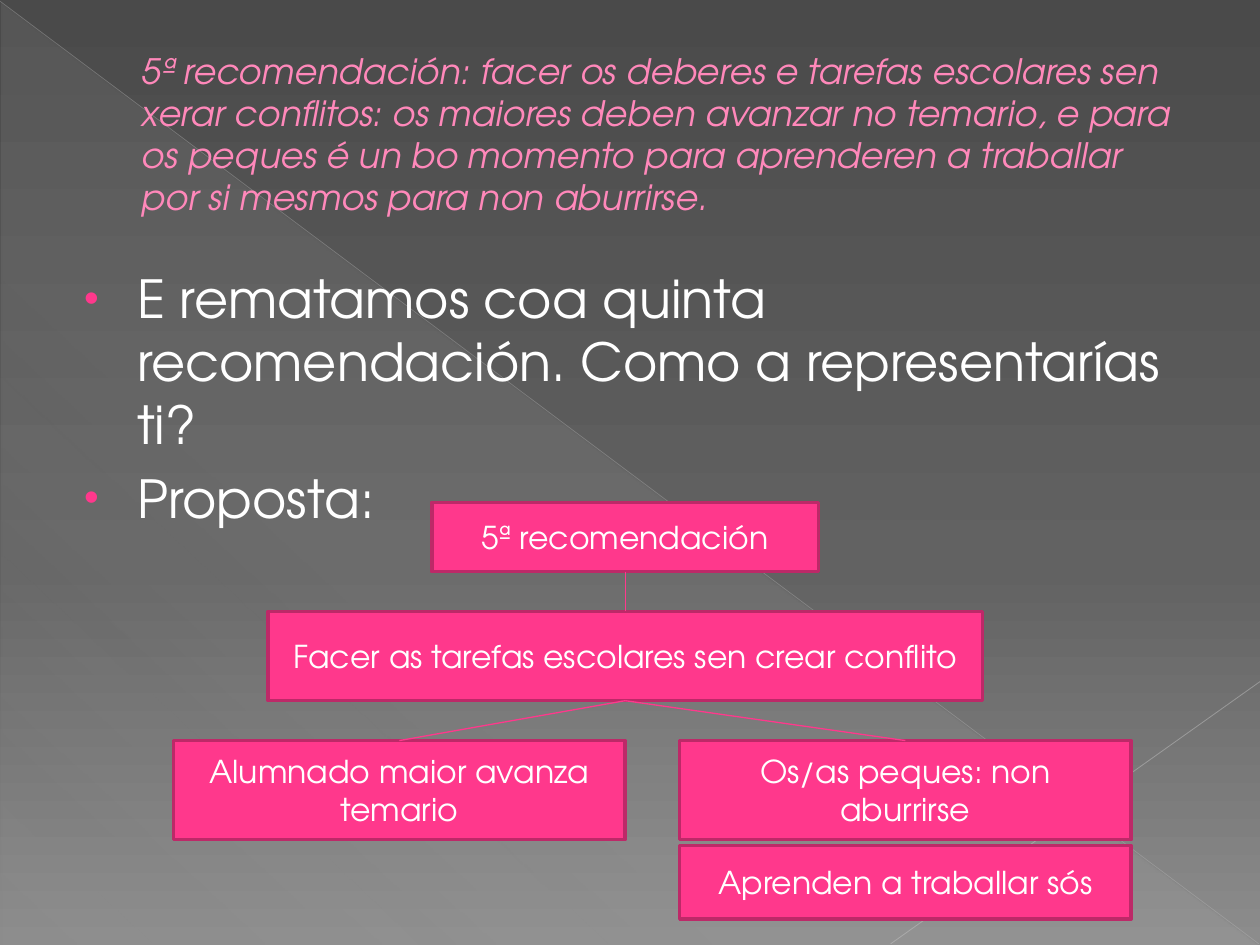
from typing import NamedTuple

from lxml.etree import SubElement
from pptx import Presentation
from pptx.dml.color import RGBColor
from pptx.enum.shapes import MSO_CONNECTOR as Connector, MSO_SHAPE as ShapeKind
from pptx.enum.text import MSO_ANCHOR as Anchor, PP_ALIGN as Align
from pptx.oxml.ns import qn
from pptx.util import Pt

COLORS = {
    "pink": "FF388C",
    "border": "BD2968",
    "title": "FF88BA",
    "outline": "B12761",
    "white": "FFFFFF",
    "dark": "4A4A4A",
    "middle": "626262",
    "light": "8C8C8C",
    "veil": "D2D2D2",
    "diagonal": "BFBFBF",
    "corner": "C6C6C6",
}
FONT = "TeX Gyre Adventor"


class Stop(NamedTuple):
    position: int
    color: str
    opacity: int = 100


class Box(NamedTuple):
    text: str
    left: float
    top: float
    width: float
    height: float

    @property
    def top_center(self) -> tuple[float, float]:
        return self.left + self.width / 2, self.top

    @property
    def bottom_center(self) -> tuple[float, float]:
        return self.left + self.width / 2, self.top + self.height


class Line(NamedTuple):
    start: tuple[float, float]
    end: tuple[float, float]
    color: str = "pink"
    width: float = 0.75
    opacity: int = 100


def rgb(name: str) -> RGBColor:
    return RGBColor.from_string(COLORS[name])


def add_color(parent, name: str, opacity: int = 100) -> None:
    color = SubElement(parent, qn("a:srgbClr"), val=COLORS[name])
    if opacity < 100:
        SubElement(color, qn("a:alpha"), val=str(opacity * 1000))


def set_gradient(fill, owner, stops: list[Stop], angle: int) -> None:
    fill.gradient()
    gradient = next(owner.iter(qn("a:gradFill")))
    stop_list = gradient.find(qn("a:gsLst"))
    for old_stop in list(stop_list):
        stop_list.remove(old_stop)
    for stop in stops:
        element = SubElement(stop_list, qn("a:gs"), pos=str(stop.position * 1000))
        add_color(element, stop.color, stop.opacity)
    gradient.find(qn("a:lin")).set("ang", str(angle * 60000))


def add_line(slide, line: Line) -> None:
    points = [Pt(value) for value in (*line.start, *line.end)]
    connector = slide.shapes.add_connector(Connector.STRAIGHT, *points)
    connector.line.width = Pt(line.width)
    connector.line.color.rgb = rgb(line.color)
    properties = connector._element.spPr
    if line.opacity < 100:
        color = next(properties.iter(qn("a:srgbClr")))
        SubElement(color, qn("a:alpha"), val=str(line.opacity * 1000))
    SubElement(properties, qn("a:effectLst"))


def write_text(paragraph, text: str, size: float, color: str, italic: bool = False):
    run = paragraph.add_run()
    run.text = text
    formats = {"name": FONT, "size": Pt(size), "italic": italic}
    for attribute, value in formats.items():
        setattr(run.font, attribute, value)
    run.font.color.rgb = rgb(color)
    return run


def add_box(slide, box: Box) -> None:
    bounds = [Pt(value) for value in box[1:]]
    shape = slide.shapes.add_shape(ShapeKind.RECTANGLE, *bounds)
    shape.shadow.inherit = False
    shape.fill.solid()
    shape.fill.fore_color.rgb = rgb("pink")
    shape.line.color.rgb = rgb("border")
    shape.line.width = Pt(2)
    frame = shape.text_frame
    for attribute, value in {"word_wrap": True, "vertical_anchor": Anchor.MIDDLE}.items():
        setattr(frame, attribute, value)
    paragraph = frame.paragraphs[0]
    paragraph.alignment = Align.CENTER
    write_text(paragraph, box.text, 18, "white")


def add_text_frame(slide, top: float, height: float, anchor: Anchor):
    frame = slide.shapes.add_textbox(Pt(36), Pt(top), Pt(648), Pt(height)).text_frame
    for attribute, value in {"word_wrap": True, "vertical_anchor": anchor}.items():
        setattr(frame, attribute, value)
    return frame


def set_indent(paragraph, left: float, first: float = 0):
    properties = paragraph._p.get_or_add_pPr()
    properties.set("marL", str(Pt(left)))
    properties.set("indent", str(Pt(first)))
    return properties


def add_title(slide, text: str) -> None:
    paragraph = add_text_frame(slide, 21, 110, Anchor.MIDDLE).paragraphs[0]
    set_indent(paragraph, 38)
    run = write_text(paragraph, text, 20, "title", italic=True)
    outline = SubElement(run.font._element, qn("a:ln"), w=str(Pt(0.5)))
    add_color(SubElement(outline, qn("a:solidFill")), "outline")
    run.font._element.insert(0, outline)


def add_bullets(slide, texts: list[str]) -> None:
    frame = add_text_frame(slide, 148.5, 360, Anchor.TOP)
    for index, text in enumerate(texts):
        paragraph = frame.add_paragraph() if index else frame.paragraphs[0]
        properties = set_indent(paragraph, 35.3, -30.3)
        add_color(SubElement(properties, qn("a:buClr")), "pink")
        SubElement(properties, qn("a:buSzPct"), val="80000")
        SubElement(properties, qn("a:buFont"), typeface="Arial")
        SubElement(properties, qn("a:buChar"), char="•")
        if index:
            paragraph.space_before = Pt(6)
        write_text(paragraph, text, 30, "white")


def add_backdrop(slide) -> None:
    stops = [Stop(0, "dark"), Stop(60, "middle"), Stop(100, "light")]
    set_gradient(slide.background.fill, slide._element, stops, 90)
    bounds = [Pt(value) for value in (0.7, 1.4, 718.6, 538.6)]
    triangle = slide.shapes.add_shape(ShapeKind.RIGHT_TRIANGLE, *bounds)
    triangle.shadow.inherit = False
    triangle.line.fill.background()
    veil = [Stop(0, "veil", 10), Stop(70, "veil", 8), Stop(100, "veil", 1)]
    set_gradient(triangle.fill, triangle._element, veil, 133)
    add_line(slide, Line((0, 0.7), (719.3, 539.3), "diagonal", 0.39, 35))
    add_line(slide, Line((720, 389.5), (509, 539.3), "corner", 0.47, 45))


def main() -> None:
    presentation = Presentation()
    presentation.slide_width, presentation.slide_height = Pt(720), Pt(540)
    slide = presentation.slides.add_slide(presentation.slide_layouts[6])
    add_backdrop(slide)
    add_title(slide, "5ª recomendación: facer os deberes e tarefas escolares sen xerar conflitos: "
              "os maiores deben avanzar no temario, e para os peques é un bo momento "
              "para aprenderen a traballar por si mesmos para non aburrirse.")
    add_bullets(slide, ["E rematamos coa quinta recomendación. Como a representarías ti?",
                        "Proposta:"])

    root = Box("5ª recomendación", 246.8, 287, 221, 39.7)
    task = Box("Facer as tarefas escolares sen crear conflito", 153.2, 349.4, 408.2, 51)
    older = Box("Alumnado maior avanza temario", 99.2, 423.2, 258, 56.7)
    younger = Box("Os/as peques: non aburrirse", 388.4, 423.2, 258, 56.7)
    alone = Box("Aprenden a traballar sós", 388.4, 483.2, 258, 42)
    for box in (root, task, older, younger, alone):
        add_box(slide, box)
    for parent, child in ((root, task), (task, older), (task, younger)):
        add_line(slide, Line(parent.bottom_center, child.top_center))
    presentation.save("out.pptx")


if __name__ == "__main__":
    main()
